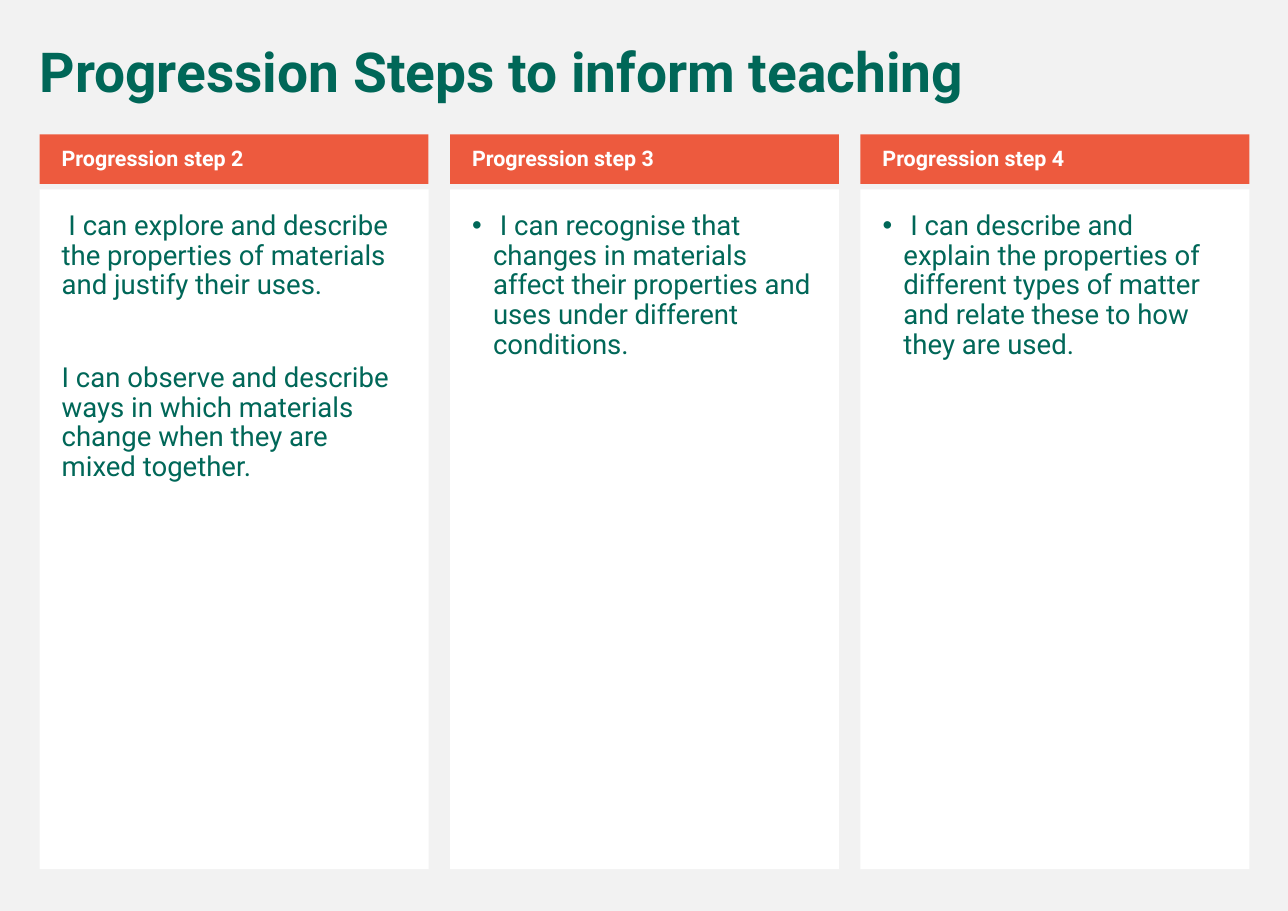
from dataclasses import dataclass

from lxml.etree import SubElement
from pptx import Presentation
from pptx.dml.color import RGBColor
from pptx.enum.shapes import MSO_SHAPE
from pptx.enum.text import MSO_ANCHOR, MSO_AUTO_SIZE, PP_ALIGN
from pptx.oxml.ns import qn
from pptx.util import Emu, Pt


@dataclass(frozen=True)
class Theme:
    font: str = "Roboto"
    background: str = "F2F2F2"
    green: str = "006758"
    orange: str = "ED5A3E"
    white: str = "FFFFFF"
    title_size: int = 36
    heading_size: int = 14
    body_size: int = 18
    line_spacing: float = 0.9
    space_before: int = 11
    statement_gap: int = 41


THEME = Theme()
EMU_PER_PX = 9144  # 100 px to the inch
SLIDE_SIZE = (1169, 827)
TITLE_BOX = (26, 36, 1108, 65)
COLUMNS_BOX = (36, 122, 1098, 667)
COLUMN_WIDTH = 353
HEADING_HEIGHT = 45
HEADING_GAP = 5
BULLET_INDENT = 19

TITLE = "Progression Steps to inform teaching"
# Heading, bulleted or not, statements
STEPS = [
    ("Progression step 2", False, [
        " I can explore and describe the properties of materials and justify their uses.",
        "I can observe and describe ways in which materials change when they are mixed together.",
    ]),
    ("Progression step 3", True, [
        " I can recognise that changes in materials affect their properties and uses "
        "under different conditions.",
    ]),
    ("Progression step 4", True, [
        " I can describe and explain the properties of different types of matter and "
        "relate these to how they are used.",
    ]),
]


def px(length):
    return Emu(round(length * EMU_PER_PX))


def apply(target, values):
    for name, value in values.items():
        setattr(target, name, value)


def place(shape, box):
    apply(shape, dict(zip(("left", "top", "width", "height"), map(px, box))))


def fill_with(shape, colour):
    shape.fill.solid()
    shape.fill.fore_color.rgb = RGBColor.from_string(colour)


def set_bullet(paragraph, bulleted):
    properties = paragraph._p.get_or_add_pPr()
    indent = px(BULLET_INDENT) if bulleted else 0
    properties.set("marL", str(indent))
    properties.set("indent", str(-indent))
    if bulleted:
        SubElement(properties, qn("a:buChar")).set("char", "•")
    else:
        SubElement(properties, qn("a:buNone"))


def write(shape, texts, size, colour, bold, insets, anchor, bulleted=False):
    frame = shape.text_frame
    sides = ("margin_left", "margin_top", "margin_right", "margin_bottom")
    apply(frame, dict(zip(sides, map(px, insets))))
    apply(frame, {"word_wrap": True, "auto_size": MSO_AUTO_SIZE.NONE,
                  "vertical_anchor": anchor})
    for index, text in enumerate(texts):
        paragraph = frame.add_paragraph() if index else frame.paragraphs[0]
        gap = THEME.statement_gap if index else THEME.space_before
        apply(paragraph, {"alignment": PP_ALIGN.LEFT, "space_before": Pt(gap),
                          "line_spacing": THEME.line_spacing})
        set_bullet(paragraph, bulleted)
        run = paragraph.add_run()
        run.text = text
        apply(run.font, {"name": THEME.font, "size": Pt(size), "bold": bold})
        run.font.color.rgb = RGBColor.from_string(colour)


def add_title(slide, box):
    title = slide.shapes.title
    place(title, box)
    write(title, [TITLE], THEME.title_size, THEME.green, True,
          (10, 5, 10, 5), MSO_ANCHOR.TOP)


def add_step(slide, body, box, step):
    left, top, width, height = box
    heading_text, bulleted, statements = step

    # White panel of statements
    offset = HEADING_HEIGHT + HEADING_GAP
    place(body, (left, top + offset, width, height - offset))
    fill_with(body, THEME.white)
    write(body, statements, THEME.body_size, THEME.green, False,
          (20, 20, 20, 20), MSO_ANCHOR.TOP, bulleted)

    # Orange heading bar
    heading = slide.shapes.add_shape(
        MSO_SHAPE.RECTANGLE, *map(px, (left, top, width, HEADING_HEIGHT)))
    heading.shadow.inherit = False
    heading.line.fill.background()
    fill_with(heading, THEME.orange)
    write(heading, [heading_text], THEME.heading_size, THEME.white, True,
          (20, 5, 10, 5), MSO_ANCHOR.MIDDLE)


def add_columns(slide, box):
    left, top, width, height = box
    bodies = [shape for shape in slide.placeholders
              if shape.placeholder_format.idx in range(1, 5)]
    pitch = (width - COLUMN_WIDTH) / (len(STEPS) - 1)
    for index, (body, step) in enumerate(zip(bodies, STEPS)):
        add_step(slide, body, (left + index * pitch, top, COLUMN_WIDTH, height), step)
    # Unused placeholders
    for body in bodies[len(STEPS):]:
        body.element.getparent().remove(body.element)


def main():
    presentation = Presentation()
    apply(presentation, dict(zip(("slide_width", "slide_height"), map(px, SLIDE_SIZE))))
    slide = presentation.slides.add_slide(
        presentation.slide_layouts.get_by_name("Comparison"))
    fill_with(slide.background, THEME.background)
    add_title(slide, TITLE_BOX)
    add_columns(slide, COLUMNS_BOX)
    presentation.save("out.pptx")


if __name__ == "__main__":
    main()
